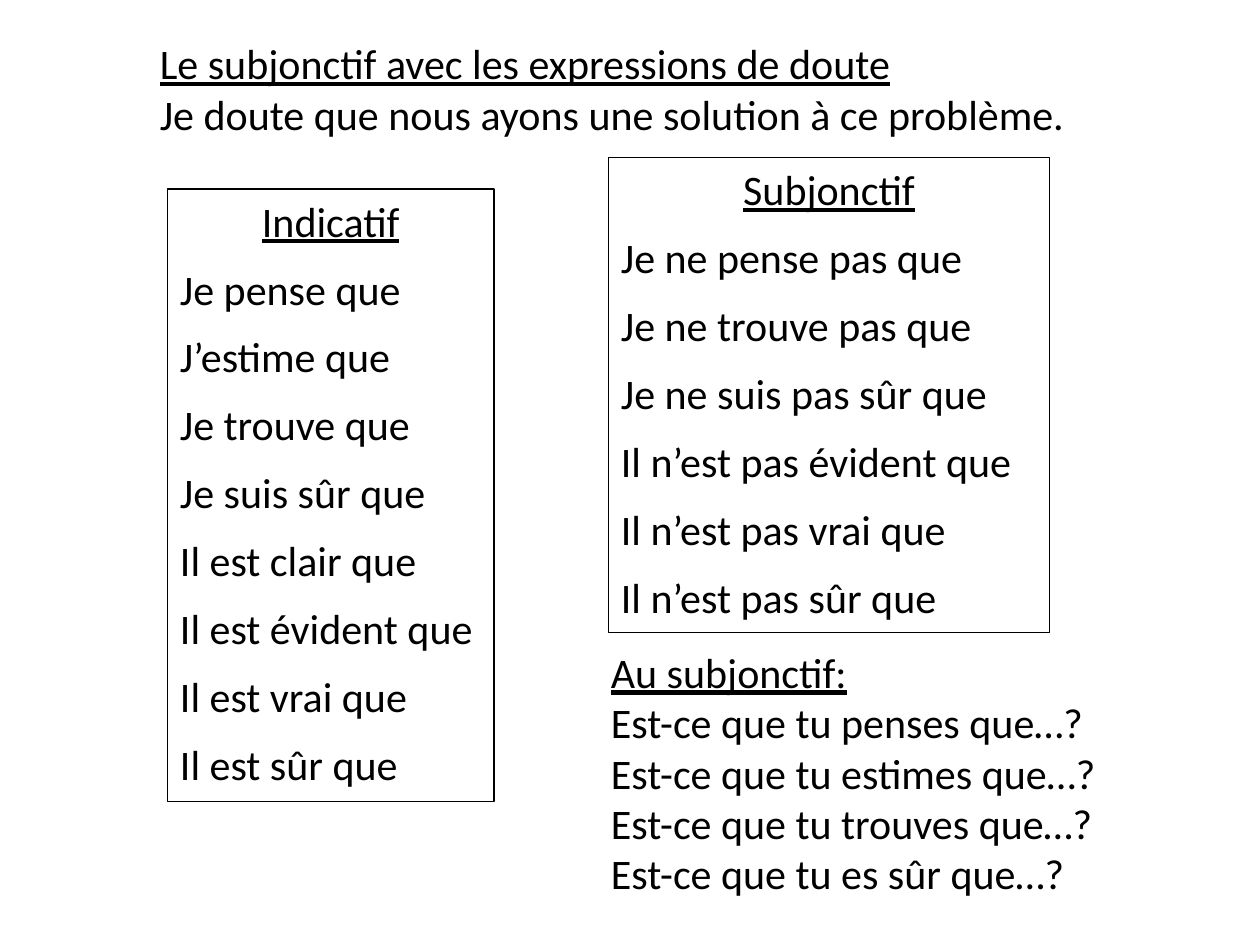
from dataclasses import dataclass

from pptx import Presentation
from pptx.dml.color import RGBColor
from pptx.enum.shapes import MSO_SHAPE
from pptx.enum.text import MSO_ANCHOR, MSO_AUTO_SIZE, PP_ALIGN
from pptx.util import Inches, Pt


@dataclass(frozen=True)
class Theme:
    font: str = "Calibri"
    size: int = 24
    ink: RGBColor = RGBColor(0, 0, 0)
    paper: RGBColor = RGBColor(255, 255, 255)
    border: float = 0.75
    list_gap: int = 10


def write_lines(frame, heading, lines, *, theme, heading_align=PP_ALIGN.LEFT, gap=0):
    """Write an underlined heading followed by one paragraph per line."""
    frame.word_wrap = True
    frame.auto_size = MSO_AUTO_SIZE.SHAPE_TO_FIT_TEXT
    frame.vertical_anchor = MSO_ANCHOR.TOP
    for index, line in enumerate([heading, *lines]):
        is_heading = index == 0
        paragraph = frame.paragraphs[0] if is_heading else frame.add_paragraph()
        paragraph.alignment = heading_align if is_heading else PP_ALIGN.LEFT
        paragraph.space_after = Pt(gap)
        run = paragraph.add_run()
        run.text = line
        run.font.name = theme.font
        run.font.size = Pt(theme.size)
        run.font.color.rgb = theme.ink
        run.font.underline = is_heading


class SlideBuilder:
    def __init__(self, slide, theme):
        self.slide = slide
        self.theme = theme

    def note(self, bounds, heading, lines):
        """Add a plain text block."""
        block = self.slide.shapes.add_textbox(*map(Inches, bounds))
        write_lines(block.text_frame, heading, lines, theme=self.theme)

    def framed_list(self, bounds, heading, lines):
        panel = self.slide.shapes.add_shape(MSO_SHAPE.RECTANGLE, *map(Inches, bounds))
        panel.shadow.inherit = False
        panel.fill.solid()
        panel.fill.fore_color.rgb = self.theme.paper
        panel.line.color.rgb = self.theme.ink
        panel.line.width = Pt(self.theme.border)
        write_lines(panel.text_frame, heading, lines, theme=self.theme,
                    heading_align=PP_ALIGN.CENTER, gap=self.theme.list_gap)


def main():
    presentation = Presentation()
    presentation.slide_width = Inches(10)
    presentation.slide_height = Inches(7.5)
    slide = presentation.slides.add_slide(presentation.slide_layouts[6])
    builder = SlideBuilder(slide, Theme())

    builder.note((1.17, 0.25, 7.75, 1.21),
                 "Le subjonctif avec les expressions de doute",
                 ["Je doute que nous ayons une solution à ce problème."])
    builder.framed_list((1.33, 1.5, 2.59, 4.86), "Indicatif", [
        "Je pense que",
        "J’estime que",
        "Je trouve que",
        "Je suis sûr que",
        "Il est clair que",
        "Il est évident que",
        "Il est vrai que",
        "Il est sûr que",
    ])
    builder.framed_list((4.83, 1.25, 3.5, 3.77), "Subjonctif", [
        "Je ne pense pas que",
        "Je ne trouve pas que",
        "Je ne suis pas sûr que",
        "Il n’est pas évident que",
        "Il n’est pas vrai que",
        "Il n’est pas sûr que",
    ])
    openings = ["penses", "estimes", "trouves", "es sûr"]
    builder.note((4.75, 5.08, 4.25, 2.12), "Au subjonctif:",
                 [f"Est-ce que tu {opening} que…?" for opening in openings])

    presentation.save("out.pptx")


if __name__ == "__main__":
    main()
